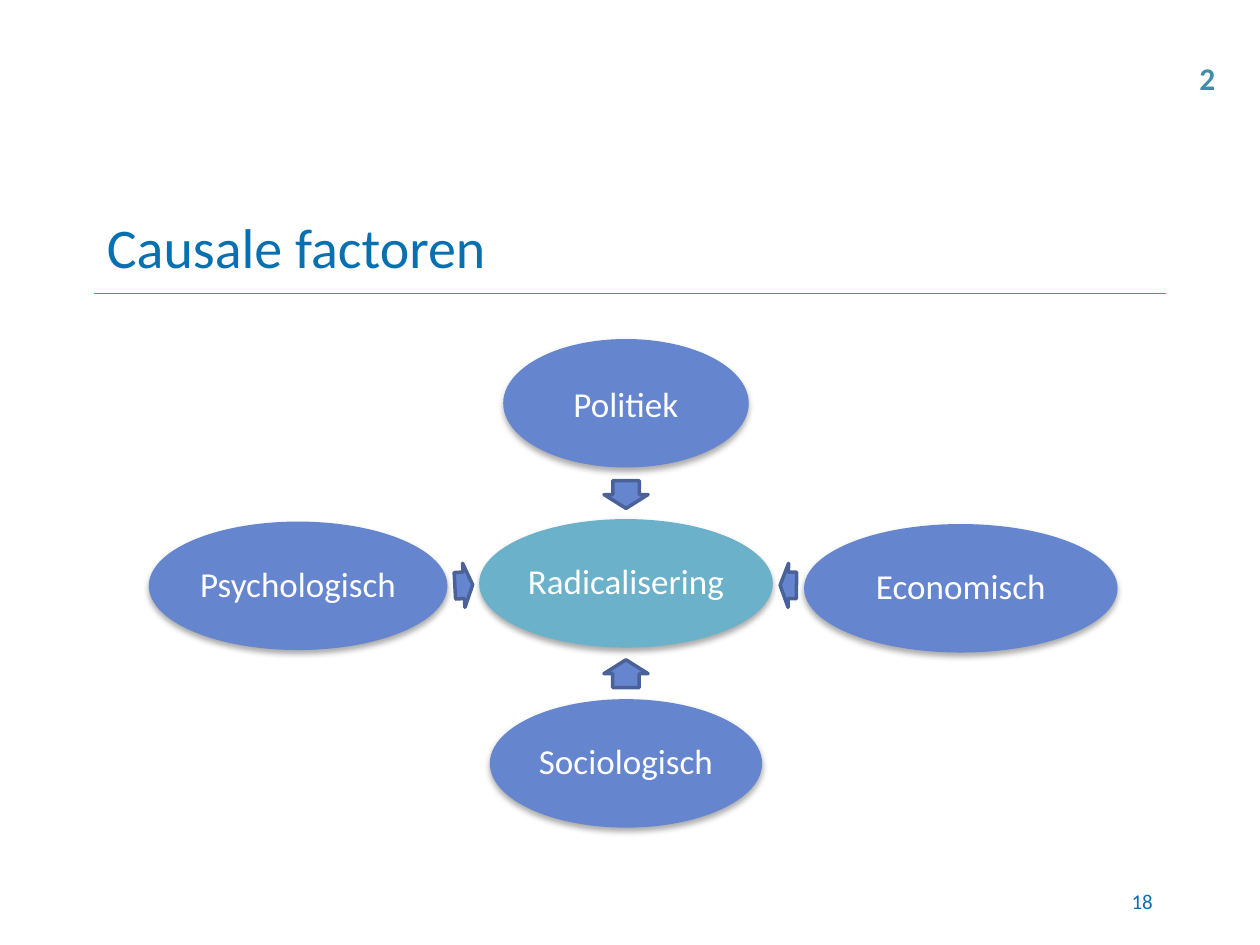
from dataclasses import dataclass

import pptx
import pptx.dml.color
import pptx.enum.shapes
import pptx.enum.text
import pptx.oxml
import pptx.oxml.ns
import pptx.util
from pptx.util import Cm

SHAPES = pptx.enum.shapes.MSO_SHAPE
ALIGN = pptx.enum.text.PP_ALIGN
ANCHOR = pptx.enum.text.MSO_ANCHOR


@dataclass(frozen=True)
class Theme:
    font: str = "Calibri"
    heading: str = "0770B1"
    rule: str = "0BA7DF"
    outcome: str = "6BB1C9"
    factor: str = "6585CF"
    arrow_edge: str = "4B6299"
    label: str = "FFFFFF"
    chapter: str = "3E8EA9"
    title_size: int = 32
    label_size: int = 20
    chapter_size: int = 18
    number_size: int = 12


THEME = Theme()
ELLIPSE_HEIGHT = 2.59
ARROW_WIDTH = 0.89
CENTRE_X = 12.62

# Label, centre x, centre y, width, fill, line spacing
ELLIPSES = [
    ("Radicalisering", CENTRE_X, 11.76, 5.92, THEME.outcome, 0.9),
    ("Politiek", CENTRE_X, 8.13, 4.95, THEME.factor, 1.0),
    ("Economisch", 19.37, 11.86, 6.32, THEME.factor, 0.9),
    ("Sociologisch", CENTRE_X, 15.39, 5.49, THEME.factor, 0.9),
    ("Psychologisch", 6.01, 11.81, 6.02, THEME.factor, 0.9),
]

# Centre x, centre y, length, rotation
ARROWS = [
    (CENTRE_X, 9.97, 0.56, 90),
    (15.89, 11.8, 0.33, 180.7),
    (CENTRE_X, 13.58, 0.56, 270),
    (9.35, 11.8, 0.36, 356.9),
]


def rgb(value):
    return pptx.dml.color.RGBColor.from_string(value)


def write(frame, text, size, color, align, anchor, bold=False):
    frame.text = text
    frame.vertical_anchor = anchor
    paragraph = frame.paragraphs[0]
    paragraph.alignment = align
    font = paragraph.runs[0].font
    font.name = THEME.font
    font.size = pptx.util.Pt(size)
    font.bold = bold
    font.color.rgb = rgb(color)


def add_effects(shape, content=""):
    effects = pptx.oxml.parse_xml(
        f'<a:effectLst {pptx.oxml.ns.nsdecls("a")}>{content}</a:effectLst>')
    shape._element.spPr.append(effects)


def add_centred(slide, kind, x, y, width, height, fill):
    shape = slide.shapes.add_shape(
        kind, Cm(x - width / 2), Cm(y - height / 2), Cm(width), Cm(height))
    shape.fill.solid()
    shape.fill.fore_color.rgb = rgb(fill)
    return shape


def add_ellipse(slide, label, x, y, width, fill, spacing):
    ellipse = add_centred(slide, SHAPES.OVAL, x, y, width, ELLIPSE_HEIGHT, fill)
    ellipse.line.fill.background()
    add_effects(ellipse,
                '<a:outerShdw blurRad="44450" dist="27940" dir="5400000" '
                'algn="ctr" rotWithShape="0"><a:srgbClr val="000000">'
                '<a:alpha val="32000"/></a:srgbClr></a:outerShdw>')
    frame = ellipse.text_frame
    frame.word_wrap = True
    frame.margin_left = frame.margin_right = Cm(0.08)
    frame.margin_top = frame.margin_bottom = Cm(0.08)
    write(frame, label, THEME.label_size, THEME.label, ALIGN.CENTER, ANCHOR.MIDDLE)
    frame.paragraphs[0].line_spacing = spacing


def add_arrow(slide, x, y, length, rotation):
    arrow = add_centred(slide, SHAPES.RIGHT_ARROW, x, y, length, ARROW_WIDTH,
                        THEME.factor)
    arrow.shadow.inherit = False
    arrow.adjustments[0] = 0.6
    arrow.adjustments[1] = 0.5
    arrow.rotation = rotation
    arrow.line.color.rgb = rgb(THEME.arrow_edge)
    arrow.line.width = pptx.util.Pt(2)


def add_title(slide, text):
    title = slide.shapes.title
    title.left, title.top = Cm(1.9), Cm(4.01)
    title.width, title.height = Cm(21.6), Cm(1.9)
    title.text_frame.auto_size = pptx.enum.text.MSO_AUTO_SIZE.NONE
    write(title.text_frame, text, THEME.title_size, THEME.heading,
          ALIGN.LEFT, ANCHOR.MIDDLE)


def add_rule(slide):
    rule = slide.shapes.add_connector(
        pptx.enum.shapes.MSO_CONNECTOR.STRAIGHT,
        Cm(1.9), Cm(5.92), Cm(23.5), Cm(5.92))
    rule.line.color.rgb = rgb(THEME.rule)
    rule.line.width = pptx.util.Pt(0.75)
    add_effects(rule)


def add_text(slide, box, wrap, *style, **options):
    frame = slide.shapes.add_textbox(*map(Cm, box)).text_frame
    frame.word_wrap = wrap
    write(frame, *style, **options)


def main():
    deck = pptx.Presentation()
    deck.slide_width, deck.slide_height = Cm(25.4), Cm(19.05)
    slide = deck.slides.add_slide(deck.slide_layouts[5])

    # Heading and page number
    add_rule(slide)
    add_title(slide, "Causale factoren")
    add_text(slide, (18.21, 17.65, 5.28, 1.02), True, "18", THEME.number_size,
             THEME.heading, ALIGN.RIGHT, ANCHOR.MIDDLE)

    # Factors pointing at the outcome
    for ellipse in ELLIPSES:
        add_ellipse(slide, *ellipse)
    for arrow in ARROWS:
        add_arrow(slide, *arrow)

    # Chapter number
    add_text(slide, (23.93, 1.07, 0.84, 1.02), False, "2", THEME.chapter_size,
             THEME.chapter, ALIGN.LEFT, ANCHOR.TOP, bold=True)

    deck.save("out.pptx")


if __name__ == "__main__":
    main()
